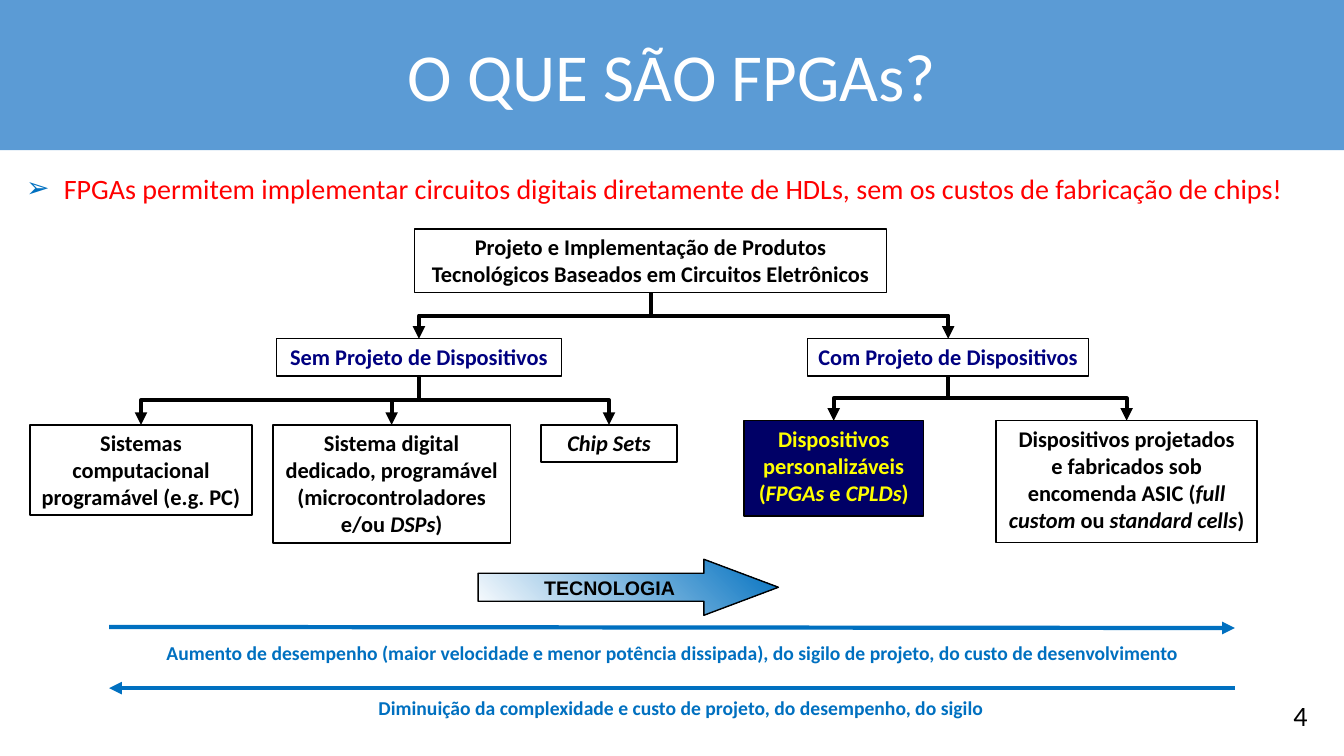
from pptx import Presentation
from pptx.dml.color import RGBColor
from pptx.enum.shapes import MSO_CONNECTOR, MSO_SHAPE
from pptx.enum.text import MSO_ANCHOR, PP_ALIGN
from pptx.oxml.ns import qn
from pptx.util import Pt
from lxml.etree import SubElement

COLORS = {
    "banner": "5B9BD5", "white": "FFFFFF", "black": "000000", "red": "FF0000",
    "blue": "0070C0", "navy": "000080", "dark": "000066", "yellow": "FFFF00",
}
RGB = {name: RGBColor.from_string(value) for name, value in COLORS.items()}


def write(sp, text, color, size, bold=True, font="Calibri", align=PP_ALIGN.CENTER,
          anchor=MSO_ANCHOR.TOP, wrap=True, margins=(6.5, 3.2)):
    """Fill a shape with text: newline = paragraph, | = line break, *...* = italic."""
    tf = sp.text_frame
    frame = {"word_wrap": wrap, "vertical_anchor": anchor,
             "margin_left": Pt(margins[0]), "margin_right": Pt(margins[0]),
             "margin_top": Pt(margins[1]), "margin_bottom": Pt(margins[1])}
    for name, value in frame.items():
        setattr(tf, name, value)
    for i, line in enumerate(text.split("\n")):
        p = tf.paragraphs[0] if i == 0 else tf.add_paragraph()
        p.alignment = align
        for j, part in enumerate(line.split("*")):
            for k, piece in enumerate(part.split("|")):
                if k:
                    p.add_line_break()
                if not piece:
                    continue
                r = p.add_run()
                r.text = piece
                fmt = {"name": font, "size": Pt(size), "bold": bold, "italic": j % 2 == 1}
                for name, value in fmt.items():
                    setattr(r.font, name, value)
                r.font.color.rgb = RGB[color]


def style_line(cxn, color, end):
    """Set a 3 pt line with a triangle at its headEnd or tailEnd and no shadow."""
    cxn.line.color.rgb = RGB[color]
    cxn.line.width = Pt(3)
    SubElement(cxn.line._get_or_add_ln(), qn(f"a:{end}"), type="triangle")
    SubElement(cxn._element.spPr, qn("a:effectLst"))


prs = Presentation()
prs.slide_width, prs.slide_height = Pt(960), Pt(540)
s = prs.slides.add_slide(prs.slide_layouts[6])

# Title banner
sp = s.shapes.add_shape(MSO_SHAPE.RECTANGLE, 0, 0, Pt(960), Pt(107.3))
sp.shadow.inherit = False
sp.fill.solid()
sp.fill.fore_color.rgb = RGB["banner"]
sp.line.fill.background()
write(sp, "O QUE SÃO FPGAs?", "white", 48, bold=False,
      anchor=MSO_ANCHOR.MIDDLE, margins=(57.6, 3.6))

# Plain texts: text, left, top, width, height, format
bullet_text = ("FPGAs permitem implementar circuitos digitais diretamente de HDLs, "
               "sem os custos de fabricação de chips!")
more = ("Aumento de desempenho (maior velocidade e menor potência dissipada), "
        "do sigilo de projeto, do custo de desenvolvimento")
less = "Diminuição da complexidade e custo de projeto, do desempenho, do sigilo"
plain = {"size": 20, "bold": False, "margins": (7.2, 3.6)}
caption = {"size": 14, "color": "blue"}
texts = [
    ("4", 884, 495.5, 57, 31.5, {**plain, "color": "black", "align": PP_ALIGN.RIGHT}),
    (more, 78, 454.5, 805, 24.5, caption),
    (less, 173, 494, 627, 25, caption),
    (bullet_text, 11.5, 119, 917.5, 31.5, {**plain, "color": "red", "align": PP_ALIGN.LEFT}),
]
for text, x, y, w, h, fmt in texts:
    sp = s.shapes.add_textbox(Pt(x), Pt(y), Pt(w), Pt(h))
    write(sp, text, **fmt)

# Arrow bullet on the last text
pPr = sp.text_frame.paragraphs[0]._p.get_or_add_pPr()
pPr.set("marL", str(Pt(27)))
pPr.set("indent", str(-Pt(27)))
SubElement(SubElement(pPr, qn("a:buClr")), qn("a:srgbClr"), val=COLORS["blue"])
SubElement(pPr, qn("a:buFont"), typeface="Arial")
SubElement(pPr, qn("a:buChar"), char="➢")

# Tree boxes: key, parent, text, left, top, width, height, fill, text colour, side margin
boxes = [
    ("root", None, "Projeto e Implementação de Produtos Tecnológicos Baseados em Circuitos Eletrônicos",
     296, 163.5, 337.5, 45.5, "white", "black", 6.5),
    ("sem", "root", "Sem Projeto de Dispositivos", 197.5, 242, 203.5, 26.5, "white", "navy", 6.5),
    ("com", "root", "Com Projeto de Dispositivos", 577, 242, 200.5, 26.5, "white", "navy", 6.5),
    ("pc", "sem", "Sistemas computacional programável (e.g. PC)",
     21.5, 303.5, 158.5, 64.5, "white", "black", 6.5),
    ("dsp", "sem", "Sistema digital dedicado, programável\n(microcontroladores e/ou *DSPs*)",
     195, 303.5, 169.5, 84.5, "white", "black", 6.5),
    ("chip", "sem", "*Chip Sets*", 386.5, 303.5, 97, 26.5, "white", "black", 6.5),
    ("fpga", "com", "Dispositivos personalizáveis\n(*FPGAs* e *CPLDs*)",
     531.5, 300.5, 128, 68, "dark", "yellow", 1.5),
    ("asic", "com", "Dispositivos projetados|e fabricados sob encomenda ASIC (*full custom* ou *standard cells*)",
     711.5, 300.5, 186.5, 87, "white", "black", 6.5),
]
bottoms = {}
for key, parent, text, x, y, w, h, fill, color, margin in boxes:
    sp = s.shapes.add_shape(MSO_SHAPE.RECTANGLE, Pt(x), Pt(y), Pt(w), Pt(h))
    sp.shadow.inherit = False
    sp.fill.solid()
    sp.fill.fore_color.rgb = RGB[fill]
    sp.line.color.rgb = RGB["black"]
    sp.line.width = Pt(1)
    write(sp, text, color, 16, margins=(margin, 3.2))
    bottoms[key] = (x + w / 2, y + h)
    if parent is None:
        continue
    # Elbow from the parent's bottom to this box's top, turned to leave vertically
    x1, y1 = bottoms[parent]
    dx, dy = x + w / 2 - x1, y - y1
    left = x1 + dx / 2 - dy / 2
    top = y1 + dy / 2 - abs(dx) / 2
    ends = (left + dy, left) if dx > 0 else (left, left + dy)
    cxn = s.shapes.add_connector(MSO_CONNECTOR.ELBOW, Pt(ends[0]), Pt(top),
                                 Pt(ends[1]), Pt(top + abs(dx)))
    cxn._element.spPr.xfrm.set("rot", str((270 if dx > 0 else 90) * 60000))
    style_line(cxn, "black", "tailEnd")

# Long trend arrows
for y1, y2, end in [(447.8, 448.6, "tailEnd"), (491.5, 491.5, "headEnd")]:
    cxn = s.shapes.add_connector(MSO_CONNECTOR.STRAIGHT, Pt(78), Pt(y1), Pt(882), Pt(y2))
    style_line(cxn, "blue", end)

# Technology block arrow
sp = s.shapes.add_shape(MSO_SHAPE.RIGHT_ARROW, Pt(341.5), Pt(399.5), Pt(214.5), Pt(40))
sp.shadow.inherit = False
sp.adjustments[0], sp.adjustments[1] = 0.5, 1.33
sp.fill.gradient()
sp.fill.gradient_angle = 45
for stop, position, color in zip(sp.fill.gradient_stops, (0, 1), ("white", "blue")):
    stop.position = position
    stop.color.rgb = RGB[color]
sp.line.color.rgb = RGB["black"]
sp.line.width = Pt(1)
write(sp, "TECNOLOGIA", "black", 14, font="Arial", anchor=MSO_ANCHOR.MIDDLE,
      wrap=False, margins=(0, 0))

prs.save("out.pptx")
